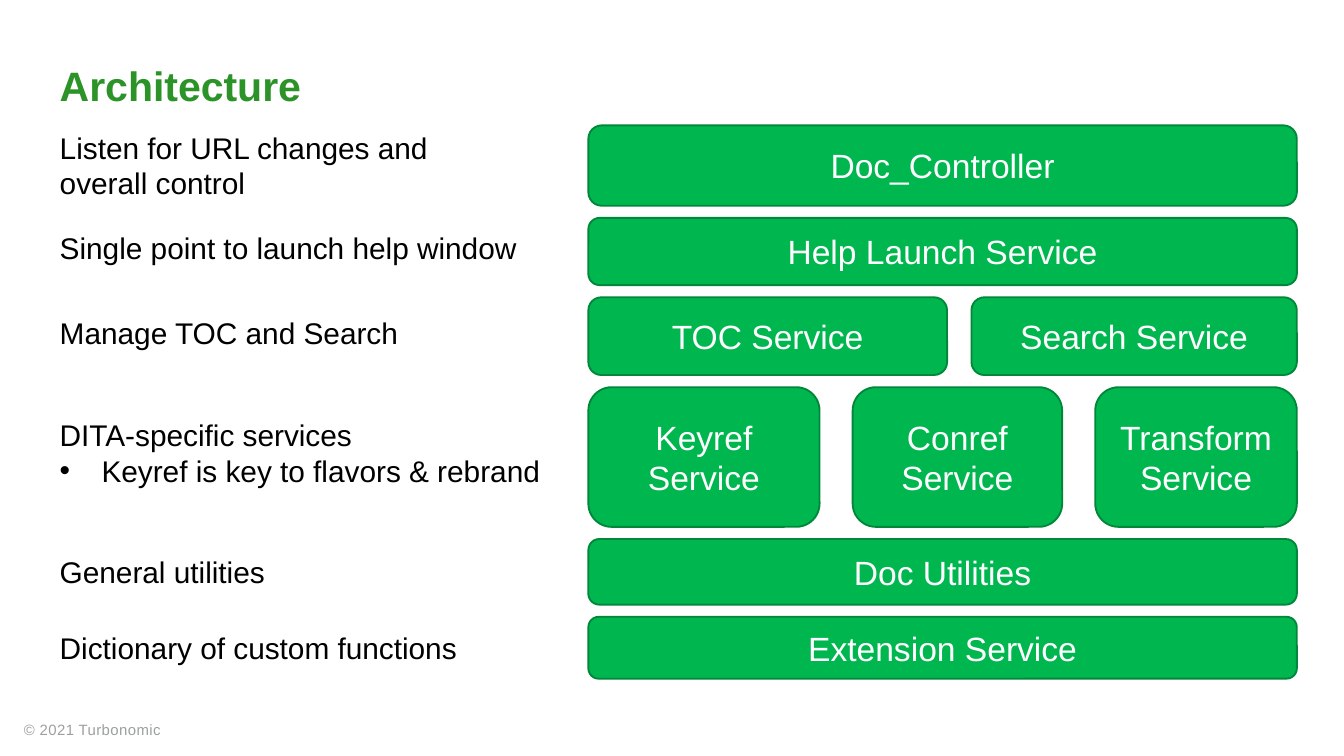
from dataclasses import dataclass

from lxml import etree
from pptx import Presentation
from pptx.dml.color import RGBColor
from pptx.enum.shapes import MSO_SHAPE
from pptx.enum.text import MSO_ANCHOR, PP_ALIGN
from pptx.oxml.ns import qn
from pptx.util import Cm, Pt

ROUNDED = MSO_SHAPE.ROUNDED_RECTANGLE
MIDDLE, BOTTOM = MSO_ANCHOR.MIDDLE, MSO_ANCHOR.BOTTOM
CENTER = PP_ALIGN.CENTER


@dataclass(frozen=True)
class Theme:
    font: str = "Arial"
    heading: RGBColor = RGBColor(0x2C, 0x93, 0x28)
    block: RGBColor = RGBColor(0x00, 0xB7, 0x4F)
    outline: RGBColor = RGBColor(0x00, 0x87, 0x3A)
    on_block: RGBColor = RGBColor(0xFF, 0xFF, 0xFF)
    body: RGBColor = RGBColor(0x00, 0x00, 0x00)
    muted: RGBColor = RGBColor(0x9A, 0xA0, 0xA0)
    heading_size: int = 22
    block_size: int = 18
    note_size: int = 16
    footer_size: int = 8


@dataclass(frozen=True)
class Layer:
    """One row: its note on the left, its (name, width) services on the right."""
    height: float
    services: tuple
    note: tuple
    note_width: float
    note_lines: int = 1
    note_lift: float = 0


THEME = Theme()
STACK_LEFT, STACK_TOP, STACK_WIDTH, LAYER_GAP = 11.12, 2.37, 13.39, 0.23
NOTE_LEFT, LINE_HEIGHT, NOTE_PADDING = 0.88, 0.68, 0.26
BULLET_INDENT = 0.79
BULLET = "•"

LAYERS = (
    Layer(1.52, (("Doc_Controller", 13.39),),
          ("Listen for URL changes and overall control",), 8.99, note_lines=2),
    Layer(1.27, (("Help Launch Service", 13.39),),
          ("Single point to launch help window",), 9.47, note_lift=0.06),
    Layer(1.47, (("TOC Service", 6.78), ("Search Service", 6.15)),
          ("Manage TOC and Search",), 9.04, note_lift=0.06),
    Layer(2.64, (("Keyref Service", 4.37), ("Conref Service", 3.96),
                 ("Transform Service", 3.81)),
          ("DITA-specific services", BULLET + "Keyref is key to flavors & rebrand"),
          9.98, note_lines=2, note_lift=0.08),
    Layer(1.24, (("Doc Utilities", 13.39),), ("General utilities",), 9.65),
    Layer(1.17, (("Extension Service", 13.39),),
          ("Dictionary of custom functions",), 9.53),
)


def add_run(paragraph, words, size, color, bold=False):
    run = paragraph.add_run()
    run.text = words
    run.font.name = THEME.font
    run.font.size = Pt(size)
    run.font.bold = bold
    run.font.color.rgb = color
    return run


def add_text_frame(slide, left, top, width, height, wrap=True):
    box = slide.shapes.add_textbox(Cm(left), Cm(top), Cm(width), Cm(height))
    box.text_frame.word_wrap = wrap
    return box.text_frame


def make_bullet(paragraph):
    properties = paragraph._p.get_or_add_pPr()
    properties.set("marL", str(Cm(BULLET_INDENT)))
    properties.set("indent", str(-Cm(BULLET_INDENT)))
    etree.SubElement(properties, qn("a:buFont"), typeface=THEME.font)
    etree.SubElement(properties, qn("a:buChar"), char=BULLET)


def add_heading(slide, left, top, width, height):
    heading = add_text_frame(slide, left, top, width, height)
    heading.margin_left = heading.margin_right = 0
    heading.margin_top = heading.margin_bottom = 0
    heading.vertical_anchor = BOTTOM
    paragraph = heading.paragraphs[0]
    paragraph.line_spacing = 0.9
    add_run(paragraph, "Architecture", THEME.heading_size, THEME.heading, bold=True)


def add_service(slide, name, left, top, width, height):
    service = slide.shapes.add_shape(ROUNDED, Cm(left), Cm(top), Cm(width), Cm(height))
    service.shadow.inherit = False
    service.fill.solid()
    service.fill.fore_color.rgb = THEME.block
    service.line.color.rgb = THEME.outline
    service.line.width = Pt(1)
    label = service.text_frame
    label.word_wrap = True
    label.vertical_anchor = MIDDLE
    label.paragraphs[0].alignment = CENTER
    add_run(label.paragraphs[0], name, THEME.block_size, THEME.on_block)


def add_services(slide, services, left, top, width, height):
    """Spread the services over the width with equal gaps."""
    spare = width - sum(service_width for _, service_width in services)
    gap = spare / max(len(services) - 1, 1)
    for name, service_width in services:
        add_service(slide, name, left, top, service_width, height)
        left += service_width + gap


def add_note(slide, lines, left, top, width, height):
    note = add_text_frame(slide, left, top, width, height)
    for index, line in enumerate(lines):
        paragraph = note.add_paragraph() if index else note.paragraphs[0]
        if line.startswith(BULLET):
            make_bullet(paragraph)
        add_run(paragraph, line.removeprefix(BULLET), THEME.note_size, THEME.body)


def add_layers(slide, left, top, width):
    """Stack the layers downwards, each note centred on its layer."""
    for layer in LAYERS:
        add_services(slide, layer.services, left, top, width, layer.height)
        note_height = layer.note_lines * LINE_HEIGHT + NOTE_PADDING
        note_top = top + (layer.height - note_height) / 2 - layer.note_lift
        add_note(slide, layer.note, NOTE_LEFT, note_top, layer.note_width, note_height)
        top += layer.height + LAYER_GAP


def add_footer(slide, left, top, width, height):
    footer = add_text_frame(slide, left, top, width, height, wrap=False)
    run = add_run(footer.paragraphs[0], "© 2021 Turbonomic",
                  THEME.footer_size, THEME.muted)
    run.font._element.set("spc", "20")


def main():
    deck = Presentation()
    deck.slide_width, deck.slide_height = Cm(25.4), Cm(14.29)
    slide = deck.slides.add_slide(deck.slide_layouts[6])
    add_footer(slide, 0.2, 13.49, 3.15, 0.61)
    add_heading(slide, 1.13, 0.99, 9.04, 1.09)
    add_layers(slide, STACK_LEFT, STACK_TOP, STACK_WIDTH)
    deck.save("out.pptx")


if __name__ == "__main__":
    main()
